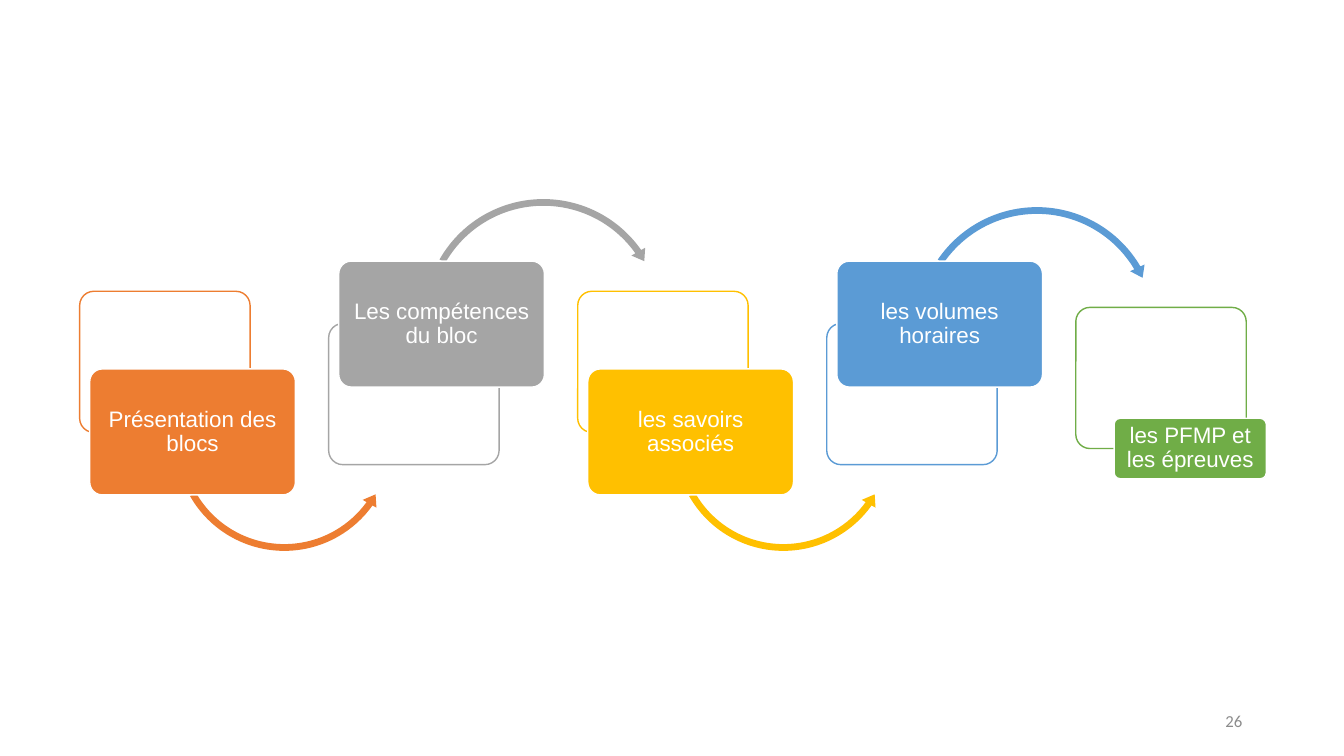
import pptx
import pptx.dml.color
import pptx.enum.shapes
import pptx.enum.text
import pptx.oxml.ns
import pptx.util
from dataclasses import dataclass
from lxml import etree

Inches = pptx.util.Inches
Pt = pptx.util.Pt
Shapes = pptx.enum.shapes.MSO_SHAPE
Align = pptx.enum.text.PP_ALIGN
Anchor = pptx.enum.text.MSO_ANCHOR

# Label, colour, frame top, box (offset from frame left, top, width, height)
LOW_BOX = (0.1, 3.66, 2.04, 1.25)
HIGH_BOX = (0.1, 2.59, 2.04, 1.25)
STEPS = [
    ("Présentation des blocs", "ED7D31", 2.89, LOW_BOX),
    ("Les compétences du bloc", "A5A5A5", 3.21, HIGH_BOX),
    ("les savoirs associés", "FFC000", 2.89, LOW_BOX),
    ("les volumes horaires", "5B9BD5", 3.21, HIGH_BOX),
    ("les PFMP et les épreuves", "70AD47", 3.05, (0.38, 4.15, 1.51, 0.6)),
]

# Arrow leaving each step but the last: preset, left, top, size, adjustments
UNDER = (Shapes.LEFT_CIRCULAR_ARROW, (0.03, 3.676, 21.431, 90.245, 0.035))
OVER = (Shapes.CIRCULAR_ARROW, (0.027, 3.331, 194.914, 125.755, 0.032))
OVER_LAST = (Shapes.CIRCULAR_ARROW, (0.027, 3.32, 197.691, 128.521, 0.032))
ARROWS = [
    (UNDER, 1.7, 3.27, 2.24),
    (OVER, 4.16, 1.93, 2.46),
    (UNDER, 6.65, 3.27, 2.24),
    (OVER_LAST, 9.05, 2.01, 2.47),
]

PAGE_NUMBER = "26"
FIRST_LEFT, PITCH = 0.79, 2.47
FRAME_WIDTH, FRAME_HEIGHT = 1.69, 1.4
CORNER = (0.1,)


@dataclass(frozen=True)
class Theme:
    white: str = "FFFFFF"
    grey: str = "8C8C8C"
    label_font: str = "Arial"
    number_font: str = "Calibri"
    label_size: int = 16
    number_size: int = 12
    line_width: int = 1
    frame_opacity: int = 90


THEME = Theme()


def rgb(colour):
    return pptx.dml.color.RGBColor.from_string(colour)


def add_figure(slide, preset, place, adjustments, fill, line=None):
    """Add a preset shape; without a line colour it has no outline."""
    shape = slide.shapes.add_shape(preset, *map(Inches, place))
    shape.shadow.inherit = False
    for index, value in enumerate(adjustments):
        shape.adjustments[index] = value
    shape.fill.solid()
    shape.fill.fore_color.rgb = rgb(fill)
    if line:
        shape.line.color.rgb = rgb(line)
        shape.line.width = Pt(THEME.line_width)
    else:
        shape.line.fill.background()
    return shape


def set_opacity(shape, percent):
    qn = pptx.oxml.ns.qn
    colour = shape.fill._xPr.find(qn("a:solidFill")).find(qn("a:srgbClr"))
    etree.SubElement(colour, qn("a:alpha")).set("val", str(percent * 1000))


def write(shape, text, font, size, colour, alignment):
    frame = shape.text_frame
    frame.word_wrap = True
    frame.vertical_anchor = Anchor.MIDDLE
    frame.text = text
    paragraph = frame.paragraphs[0]
    paragraph.alignment = alignment
    run_font = paragraph.runs[0].font
    run_font.name = font
    run_font.size = Pt(size)
    run_font.color.rgb = rgb(colour)
    return frame


def add_step(slide, index):
    label, colour, frame_top, (offset, top, width, height) = STEPS[index]
    left = FIRST_LEFT + index * PITCH
    frame = add_figure(slide, Shapes.ROUNDED_RECTANGLE,
                       (left, frame_top, FRAME_WIDTH, FRAME_HEIGHT),
                       CORNER, THEME.white, colour)
    set_opacity(frame, THEME.frame_opacity)

    if index < len(ARROWS):
        (preset, adjustments), arrow_left, arrow_top, size = ARROWS[index]
        add_figure(slide, preset, (arrow_left, arrow_top, size, size),
                   adjustments, colour)

    box = add_figure(slide, Shapes.ROUNDED_RECTANGLE,
                     (left + offset, top, width, height),
                     CORNER, colour, THEME.white)
    text_frame = write(box, label, THEME.label_font, THEME.label_size,
                       THEME.white, Align.CENTER)
    text_frame.margin_left = text_frame.margin_right = Inches(0.03)
    text_frame.margin_top = text_frame.margin_bottom = Inches(0.02)
    text_frame.paragraphs[0].line_spacing = 0.9


def main():
    presentation = pptx.Presentation()
    presentation.slide_width = Inches(13.33)
    presentation.slide_height = Inches(7.5)
    slide = presentation.slides.add_slide(presentation.slide_layouts[6])

    for index in range(len(STEPS)):
        add_step(slide, index)

    number = slide.shapes.add_textbox(*map(Inches, (9.42, 6.95, 3, 0.4)))
    write(number, PAGE_NUMBER, THEME.number_font, THEME.number_size,
          THEME.grey, Align.RIGHT)
    presentation.save("out.pptx")


if __name__ == "__main__":
    main()
